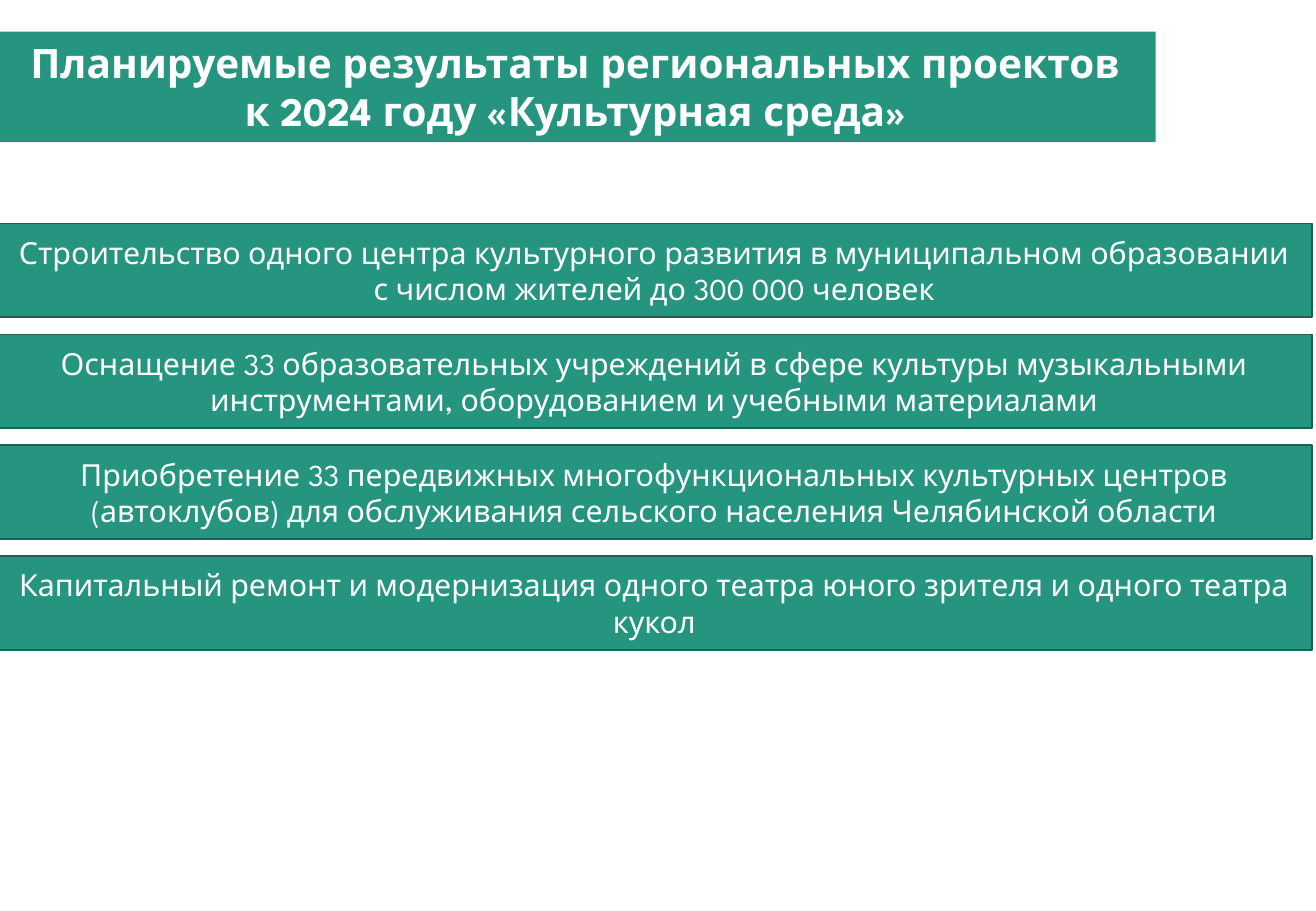
from pptx import Presentation
from pptx.dml.color import RGBColor
from pptx.enum.shapes import MSO_SHAPE
from pptx.enum.text import MSO_ANCHOR, MSO_AUTO_SIZE, PP_ALIGN
from pptx.util import Inches, Pt

GREEN = RGBColor(0x26, 0x95, 0x7F)
DARK_GREEN = RGBColor(0x19, 0x63, 0x54)
WHITE = RGBColor(0xFF, 0xFF, 0xFF)
FONT = "League Spartan"

TITLE = "Планируемые результаты региональных проектов\nк 2024 году «Культурная среда»"
RESULTS = [
    "Строительство одного центра культурного развития в муниципальном образовании "
    "с числом жителей до 300 000 человек",
    "Оснащение 33 образовательных учреждений в сфере культуры музыкальными "
    "инструментами, оборудованием и учебными материалами",
    "Приобретение 33 передвижных многофункциональных культурных центров "
    "(автоклубов) для обслуживания сельского населения Челябинской области",
    "Капитальный ремонт и модернизация одного театра юного зрителя и одного театра кукол",
]
FIRST_TOP, LAST_TOP = 1.84, 4.58


def fill_with_text(shape, text, size, bold, anchor):
    """Paint the shape green and set its centred white text."""
    shape.fill.solid()
    shape.fill.fore_color.rgb = GREEN
    frame = shape.text_frame
    frame.text = text
    frame.word_wrap = True
    frame.vertical_anchor = anchor
    for paragraph in frame.paragraphs:
        paragraph.alignment = PP_ALIGN.CENTER
        for span in paragraph.runs:
            span.font.name = FONT
            span.font.size = Pt(size)
            span.font.bold = bold
            span.font.color.rgb = WHITE


def set_title(slide):
    title = slide.shapes.title
    title.left, title.top = Inches(-0.04), Inches(0.26)
    title.width, title.height = Inches(9.55), Inches(0.91)
    fill_with_text(title, TITLE, 24, True, MSO_ANCHOR.TOP)
    title.text_frame.auto_size = MSO_AUTO_SIZE.SHAPE_TO_FIT_TEXT


def add_result_bar(slide, top, text):
    bar = slide.shapes.add_shape(
        MSO_SHAPE.RECTANGLE, Inches(-0.03), Inches(top), Inches(10.83), Inches(0.77)
    )
    bar.shadow.inherit = False
    bar.line.color.rgb = DARK_GREEN
    bar.line.width = Pt(1)
    fill_with_text(bar, text, 18, False, MSO_ANCHOR.MIDDLE)


def main():
    deck = Presentation()
    deck.slide_width, deck.slide_height = Inches(10.83), Inches(7.5)
    slide = deck.slides.add_slide(deck.slide_layouts.get_by_name("Title Only"))
    set_title(slide)
    pitch = (LAST_TOP - FIRST_TOP) / (len(RESULTS) - 1)
    for index, result in enumerate(RESULTS):
        add_result_bar(slide, FIRST_TOP + index * pitch, result)
    deck.save("out.pptx")


if __name__ == "__main__":
    main()
